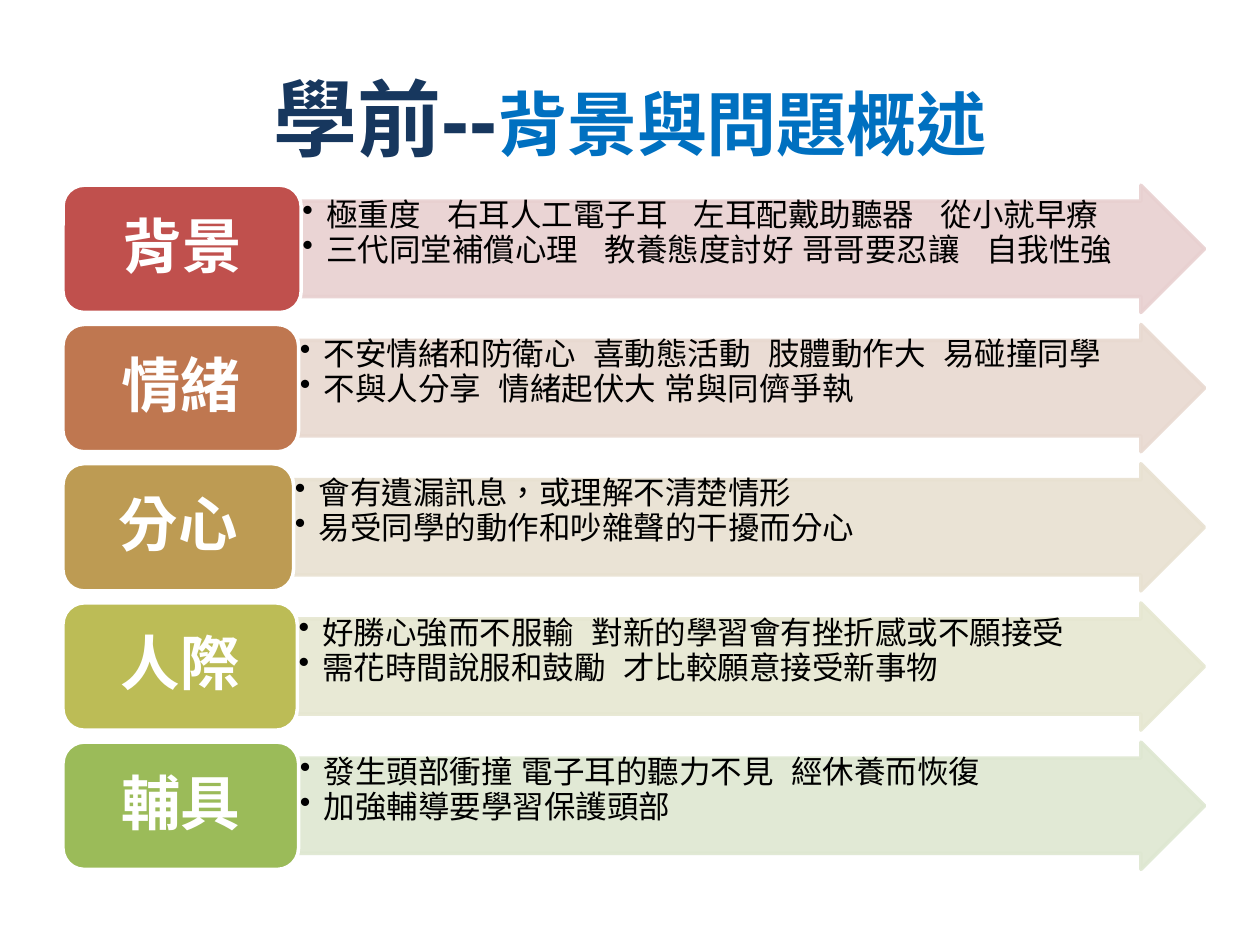
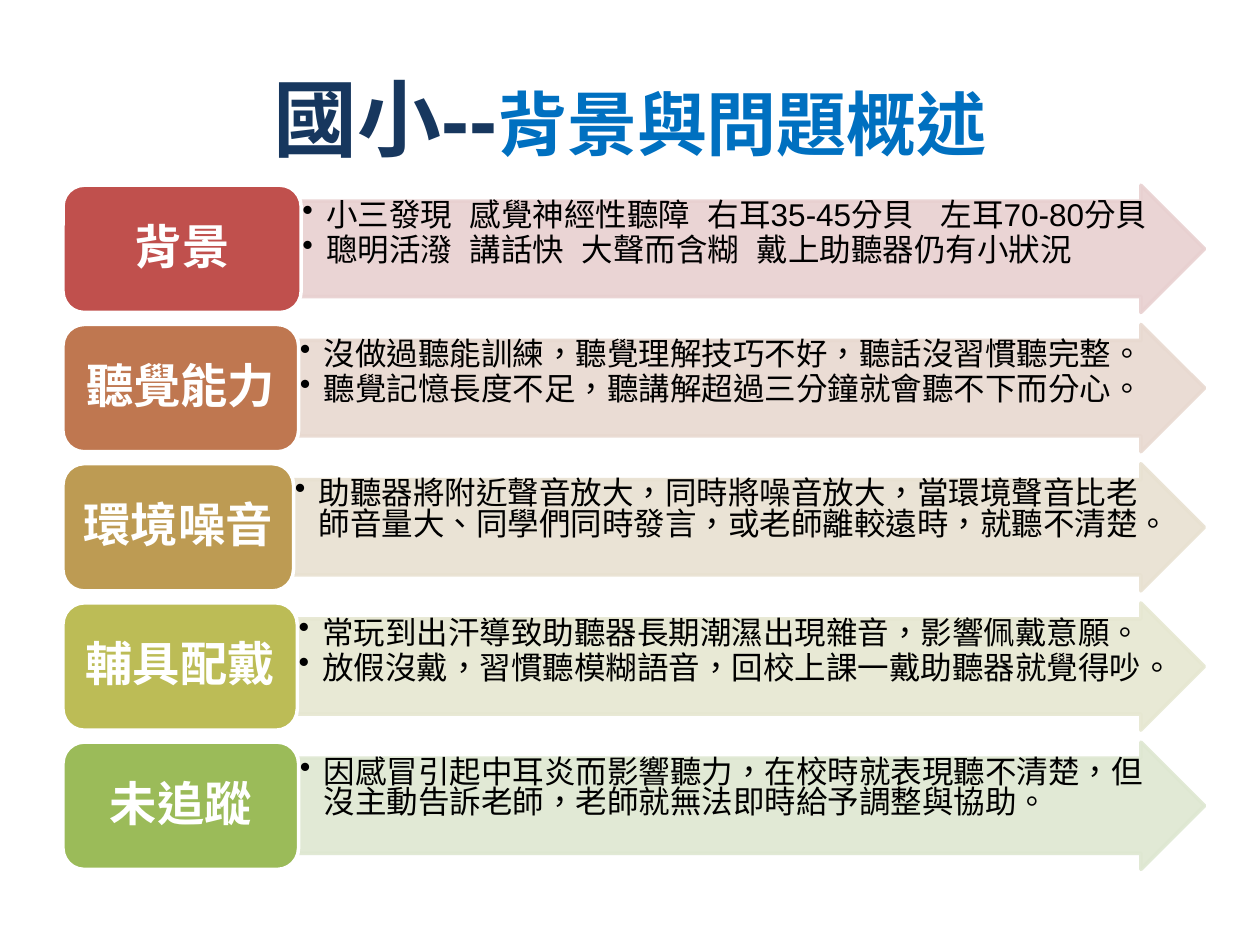
from lxml import etree
from pptx import Presentation
from pptx import util as u
from pptx.dml.color import RGBColor
from pptx.enum import shapes, text
from pptx.oxml import ns

FONT = "Arial"
COLOURS = {
    "stage": "17375E",
    "topic": "0070C0",
    "label_text": "FFFFFF",
    "label_line": "FFFFFF",
    "detail_text": "000000",
}
# Label fill, arrow fill and label width in inches for each row
ROW_STYLES = [
    ("C0504D", "E8D0D0", 1.89),
    ("BF7750", "E8D9D0", 1.87),
    ("BD9B53", "E8E1D1", 1.83),
    ("BCBC56", "E6E7D1", 1.86),
    ("9BBB59", "DEE7D1", 1.87),
]
ROWS_LEFT, ROWS_TOP, ROWS_WIDTH, ROWS_HEIGHT = 0.5, 1.47, 9.06, 5.43
ROW_HEIGHT = 1.01
ROW_PITCH = (ROWS_HEIGHT - ROW_HEIGHT) / (len(ROW_STYLES) - 1)
ARROW_OPACITY = 90
BULLET_INDENT = 0.19
# Points added to the single space between two phrases
GAP, WIDE_GAP = 5, 10

TOPIC = "背景與問題概述"
PRESCHOOL_ROWS = [
    ("背景", [
        ["極重度", WIDE_GAP, "右耳人工電子耳", WIDE_GAP, "左耳配戴助聽器", WIDE_GAP, "從小就早療"],
        ["三代同堂補償心理", WIDE_GAP, "教養態度討好 哥哥要忍讓", WIDE_GAP, "自我性強"],
    ]),
    ("情緒", [
        ["不安情緒和防衛心", GAP, "喜動態活動", GAP, "肢體動作大", GAP, "易碰撞同學"],
        ["不與人分享", GAP, "情緒起伏大 常與同儕爭執"],
    ]),
    ("分心", [
        ["會有遺漏訊息，或理解不清楚情形"],
        ["易受同學的動作和吵雜聲的干擾而分心"],
    ]),
    ("人際", [
        ["好勝心強而不服輸", GAP, "對新的學習會有挫折感或不願接受"],
        ["需花時間說服和鼓勵", GAP, "才比較願意接受新事物"],
    ]),
    ("輔具", [
        ["發生頭部衝撞 電子耳的聽力不見", GAP, "經休養而恢復"],
        ["加強輔導要學習保護頭部"],
    ]),
]
PRIMARY_ROWS = [
    ("背景", [
        ["小三發現", GAP, "感覺神經性聽障", GAP, "右耳35-45分貝", WIDE_GAP, "左耳70-80分貝"],
        ["聰明活潑", GAP, "講話快", GAP, "大聲而含糊", GAP, "戴上助聽器仍有小狀況"],
    ]),
    ("聽覺能力", [
        ["沒做過聽能訓練，聽覺理解技巧不好，聽話沒習慣聽完整。"],
        ["聽覺記憶長度不足，聽講解超過三分鐘就會聽不下而分心。"],
    ]),
    ("環境噪音", [
        ["助聽器將附近聲音放大，同時將噪音放大，當環境聲音比老師音量大、同學們同時發言，或老師離較遠時，就聽不清楚。"],
    ]),
    ("輔具配戴", [
        ["常玩到出汗導致助聽器長期潮濕出現雜音，影響佩戴意願。"],
        ["放假沒戴，習慣聽模糊語音，回校上課一戴助聽器就覺得吵。"],
    ]),
    ("未追蹤", [
        ["因感冒引起中耳炎而影響聽力，在校時就表現聽不清楚，但沒主動告訴老師，老師就無法即時給予調整與協助。"],
    ]),
]


def rgb(colour):
    return RGBColor.from_string(colour)


def add_run(paragraph, words, size, colour, bold=False, tracking=0):
    """Add a run; tracking is the extra width of each character in points."""
    run = paragraph.add_run()
    run.text = words
    run.font.size = u.Pt(size)
    run.font.bold = bold
    run.font.name = FONT
    run.font.color.rgb = rgb(colour)
    properties = run._r.get_or_add_rPr()
    properties.set("lang", "zh-TW")
    if tracking:
        properties.set("spc", str(tracking * 100))
    etree.SubElement(properties, ns.qn("a:ea"), typeface=FONT)


def add_box(slide, kind, left, top, width, height, fill, line):
    shape = slide.shapes.add_shape(
        kind, u.Inches(left), u.Inches(top), u.Inches(width), u.Inches(height))
    shape.shadow.inherit = False
    shape.fill.solid()
    shape.fill.fore_color.rgb = rgb(fill)
    shape.line.color.rgb = rgb(line)
    shape.line.width = u.Pt(2)
    return shape


def set_frame(shape, anchor, side_inset, end_inset):
    frame = shape.text_frame
    frame.word_wrap = True
    frame.vertical_anchor = anchor
    frame.margin_left = frame.margin_right = u.Inches(side_inset)
    frame.margin_top = frame.margin_bottom = u.Inches(end_inset)
    return frame


def set_opacity(shape, percent):
    """Apply the opacity to both the fill and the line."""
    for colour in shape._element.spPr.iter(ns.qn("a:srgbClr")):
        etree.SubElement(colour, ns.qn("a:alpha"), val=str(percent * 1000))


def add_bullet(paragraph):
    properties = paragraph._p.get_or_add_pPr()
    properties.set("marL", str(u.Inches(BULLET_INDENT)))
    properties.set("indent", str(-u.Inches(BULLET_INDENT)))
    etree.SubElement(properties, ns.qn("a:buChar"), char="•")


def add_arrow(slide, left, top, width, fill, lines):
    arrow = add_box(slide, shapes.MSO_SHAPE.RIGHT_ARROW,
                    left, top, width, ROW_HEIGHT, fill, fill)
    arrow.adjustments[0] = 0.75
    arrow.adjustments[1] = 0.5
    set_opacity(arrow, ARROW_OPACITY)
    frame = set_frame(arrow, text.MSO_ANCHOR.TOP, 0.01, 0.01)
    for index, line in enumerate(lines):
        paragraph = frame.add_paragraph() if index else frame.paragraphs[0]
        add_bullet(paragraph)
        paragraph.level = 1
        paragraph.alignment = text.PP_ALIGN.LEFT
        paragraph.line_spacing = 0.8
        paragraph.space_after = u.Pt(2.7)
        for part in line:
            is_gap = isinstance(part, int)
            add_run(paragraph, " " if is_gap else part, 18,
                    COLOURS["detail_text"], tracking=part if is_gap else 0)


def add_label(slide, left, top, width, fill, words, size):
    label = add_box(slide, shapes.MSO_SHAPE.ROUNDED_RECTANGLE,
                    left, top, width, ROW_HEIGHT, fill, COLOURS["label_line"])
    frame = set_frame(label, text.MSO_ANCHOR.MIDDLE, 0.1, 0.06)
    paragraph = frame.paragraphs[0]
    paragraph.alignment = text.PP_ALIGN.CENTER
    paragraph.line_spacing = 0.9
    add_run(paragraph, words, size, COLOURS["label_text"], bold=True)


def add_rows(slide, left, top, width, rows, label_size):
    for index, ((label, lines), style) in enumerate(zip(rows, ROW_STYLES)):
        label_fill, arrow_fill, label_width = style
        row_top = top + index * ROW_PITCH
        add_arrow(slide, left + label_width, row_top, width - label_width,
                  arrow_fill, lines)
        add_label(slide, left, row_top, label_width, label_fill, label, label_size)


def set_title(slide, stage):
    title = slide.shapes.title
    title.left, title.top = u.Inches(0.5), u.Inches(0.3)
    title.width, title.height = u.Inches(9), u.Inches(1.25)
    title.text_frame.vertical_anchor = text.MSO_ANCHOR.MIDDLE
    paragraph = title.text_frame.paragraphs[0]
    paragraph.alignment = text.PP_ALIGN.CENTER
    add_run(paragraph, f"{stage}--", 48, COLOURS["stage"], bold=True)
    add_run(paragraph, TOPIC, 40, COLOURS["topic"], bold=True)


def add_overview_slide(presentation, stage, rows, label_size):
    slide = presentation.slides.add_slide(presentation.slide_layouts[5])
    set_title(slide, stage)
    add_rows(slide, ROWS_LEFT, ROWS_TOP, ROWS_WIDTH, rows, label_size)


def main():
    presentation = Presentation()
    presentation.slide_width = u.Inches(10)
    presentation.slide_height = u.Inches(7.5)
    add_overview_slide(presentation, "學前", PRESCHOOL_ROWS, 34)
    add_overview_slide(presentation, "國小", PRIMARY_ROWS, 27)
    presentation.save("out.pptx")


if __name__ == "__main__":
    main()
